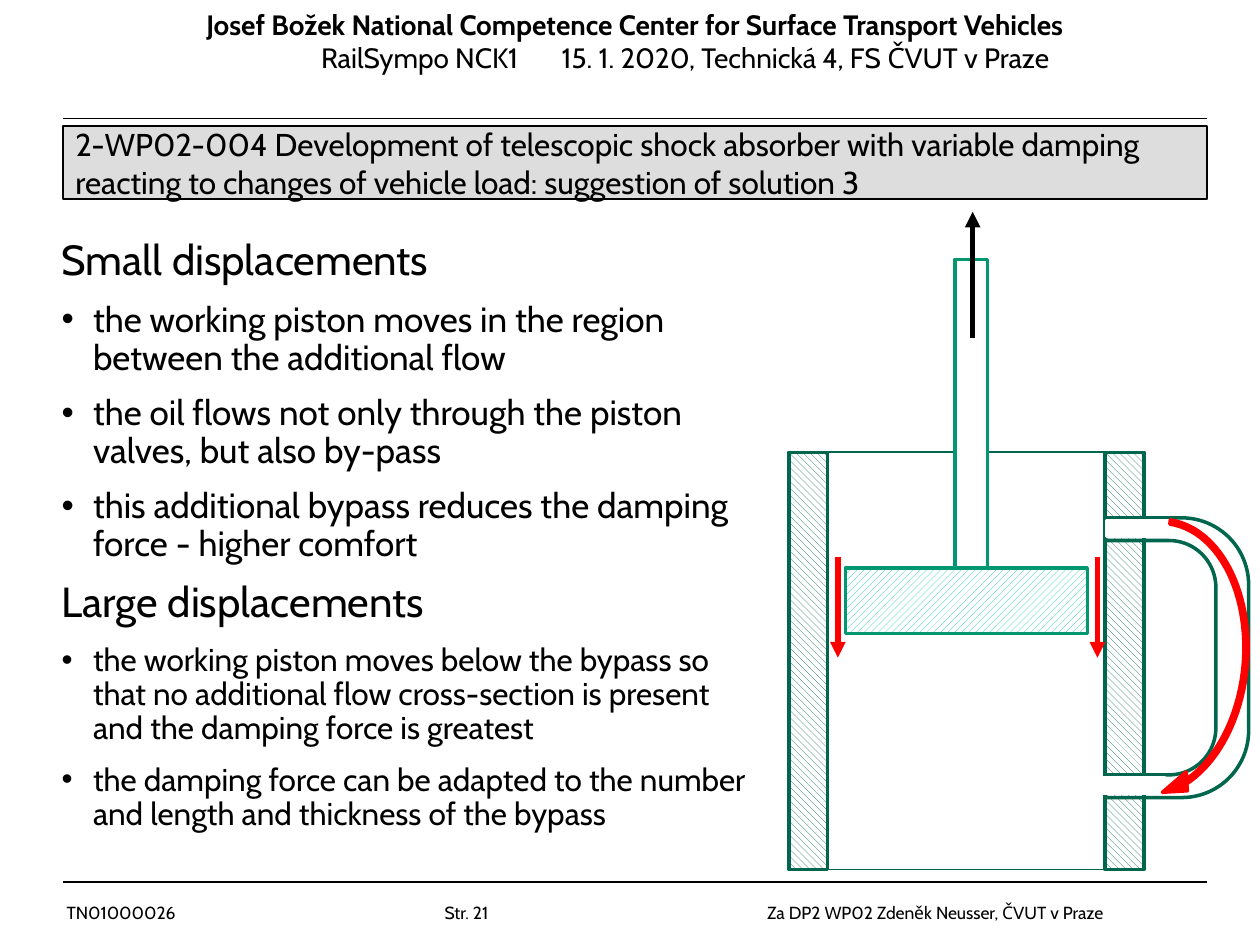
from lxml import etree
from pptx import Presentation
from pptx.dml.color import RGBColor
from pptx.enum.dml import MSO_PATTERN as PATTERN
from pptx.enum.shapes import MSO_CONNECTOR, MSO_SHAPE as SHAPE
from pptx.enum.text import MSO_ANCHOR, PP_ALIGN
from pptx.oxml.ns import qn
from pptx.util import Inches, Pt

BLACK, WHITE, GREY, RED = "000000", "FFFFFF", "DDDDDD", "FF0000"
DARK_GREEN, GREEN, LIGHT_GREEN = "00664D", "009771", "00CC99"
DOWN = PATTERN.WIDE_DOWNWARD_DIAGONAL
UP = PATTERN.WIDE_UPWARD_DIAGONAL


def rgb(value):
    return RGBColor.from_string(value)


class SlideBuilder:
    """Holds the text style, the slide and the shape tree being filled."""
    font = "Cabin"

    def __init__(self, prs):
        self.s = prs.slides.add_slide(prs.slide_layouts[6])
        self.shapes = self.s.shapes

    def start_group(self):
        self.shapes = self.s.shapes.add_group_shape().shapes

    def shape(self, kind, box, fill, line, width=2, hatch=None, adj=(), rotation=0):
        sp = self.shapes.add_shape(kind, *map(Inches, box))
        sp.shadow.inherit = False
        sp.rotation = rotation
        for i, value in enumerate(adj):
            sp.adjustments[i] = value
        if hatch:
            sp.fill.patterned()
            sp.fill.pattern = hatch
            sp.fill.fore_color.rgb = rgb(fill)
            sp.fill.back_color.rgb = rgb(WHITE)
        elif fill:
            sp.fill.solid()
            sp.fill.fore_color.rgb = rgb(fill)
        else:
            sp.fill.background()
        sp.line.color.rgb = rgb(line)
        sp.line.width = Pt(width)

    def line(self, x1, y1, x2, y2, color, width, arrow=False):
        c = self.shapes.add_connector(
            MSO_CONNECTOR.STRAIGHT, *map(Inches, (x1, y1, x2, y2)))
        c.line.color.rgb = rgb(color)
        c.line.width = Pt(width)
        if arrow:
            etree.SubElement(c.line._get_or_add_ln(), qn("a:tailEnd"), type="triangle")
        etree.SubElement(c._element.spPr, qn("a:effectLst"))

    def text_box(self, box, anchor=MSO_ANCHOR.TOP):
        tf = self.shapes.add_textbox(*map(Inches, box)).text_frame
        tf.word_wrap = True
        tf.vertical_anchor = anchor
        return tf

    def paragraph(self, tf, text, size, bold=False, bullet=False, tabs=()):
        """Fill the first paragraph while it is empty, otherwise add one."""
        p = tf.paragraphs[0] if not tf.text else tf.add_paragraph()
        p.text = text
        pPr = p._p.get_or_add_pPr()
        if bullet:
            pPr.set("marL", str(Inches(0.25)))
            pPr.set("indent", str(-Inches(0.25)))
            etree.SubElement(pPr, qn("a:buFont"), typeface="Arial")
            etree.SubElement(pPr, qn("a:buChar"), char="•")
        if tabs:
            stops = etree.SubElement(pPr, qn("a:tabLst"))
            for pos in tabs:
                etree.SubElement(stops, qn("a:tab"), pos=str(Inches(pos)), algn="l")
        for r in p.runs:
            r.font.name = self.font
            r.font.size = Pt(size)
            r.font.bold = bold
            r.font.color.rgb = rgb(BLACK)
        return p


def add_frame(b):
    for y in (7, 0.94):
        b.line(0.5, y, 9.58, y, BLACK, 0.75)
    b.paragraph(b.text_box((0.43, 7.11, 9.21, 0.27)),
                "TN01000026\tStr. 21\tZa DP2 WP02 Zdeněk Neusser, ČVUT v Praze",
                10, tabs=(3, 5.56))
    tf = b.text_box((0.79, 0.01, 8.5, 0.64))
    p = b.paragraph(tf, "Josef Božek National Competence Center "
                    "for Surface Transport Vehicles", 16, bold=True)
    p.alignment = PP_ALIGN.CENTER
    b.paragraph(tf, "\tRailSympo NCK1\t15. 1. 2020, Technická 4, FS ČVUT v Praze",
                16, tabs=(1.66, 3.57))
    title_box = (0.5, 1, 9.08, 0.58)
    b.shape(SHAPE.RECTANGLE, title_box, GREY, BLACK, 0.75)
    b.paragraph(b.text_box(title_box, MSO_ANCHOR.MIDDLE),
                "2-WP02-004 Development of telescopic shock absorber with variable "
                "damping reacting to changes of vehicle load: suggestion of solution 3", 18)


def add_body(b):
    sections = [
        ("Small displacements", 20, [
            "the working piston moves in the region between the additional flow",
            "the oil flows not only through the piston valves, but also by-pass",
            "this additional bypass reduces the damping force - higher comfort"]),
        ("Large displacements", 18, [
            "the working piston moves below the bypass so that no additional flow "
            "cross-section is present and the damping force is greatest",
            "the damping force can be adapted to the number and length and "
            "thickness of the bypass"]),
    ]
    tf = b.text_box((0.39, 1.85, 5.76, 5.65))
    for heading, size, points in sections:
        b.paragraph(tf, heading, 24)
        for point in points:
            b.paragraph(tf, point, size, bullet=True)
    for i, p in enumerate(tf.paragraphs):
        p.line_spacing = 0.9
        p.space_before = Pt(10 if i else 0)


def add_absorber(b):
    b.start_group()
    b.line(6.42, 3.59, 8.93, 3.59, DARK_GREEN, 1)
    for wall_x in (8.77, 6.26):
        b.shape(SHAPE.RECTANGLE, (wall_x, 3.59, 0.31, 3.31), DARK_GREEN, DARK_GREEN,
                hatch=DOWN)
    rod = (7.58, 2.06, 0.26, 2.45)
    b.shape(SHAPE.RECTANGLE, rod, WHITE, GREEN)
    b.line(6.57, 6.9, 8.93, 6.9, DARK_GREEN, 1)
    for bypass in ((8.14, 4.11, 1.77, 2.22), (8.41, 4.29, 1.24, 1.86)):
        b.shape(SHAPE.ROUNDED_RECTANGLE, bypass, None, DARK_GREEN, adj=[0.3])
    openings = ((8.03, 3.85, 0.71, 2.65), (8.78, 4.13, 0.52, 0.13), (8.72, 6.17, 0.52, 0.13))
    for opening in openings:
        b.shape(SHAPE.RECTANGLE, opening, WHITE, WHITE)
    piston = (6.71, 4.51, 1.92, 0.52)
    b.shape(SHAPE.RECTANGLE, piston, LIGHT_GREEN, GREEN, hatch=UP)


def add_flow_arrows(b):
    b.start_group()
    b.line(7.72, 2.68, 7.72, 1.68, BLACK, 3, arrow=True)
    for x in (6.65, 8.71):
        b.line(x, 4.42, x, 5.22, RED, 3, arrow=True)
    b.shape(SHAPE.CIRCULAR_ARROW, (8, 4.42, 2.32, 1.6), RED, RED, rotation=95.2,
            adj=(0.021, 6.749, 204.033, 108.884, 0.047))


def main():
    prs = Presentation()
    prs.slide_width, prs.slide_height = Inches(10), Inches(7.5)
    b = SlideBuilder(prs)
    add_frame(b)
    add_body(b)
    add_absorber(b)
    add_flow_arrows(b)
    prs.save("out.pptx")


if __name__ == "__main__":
    main()
